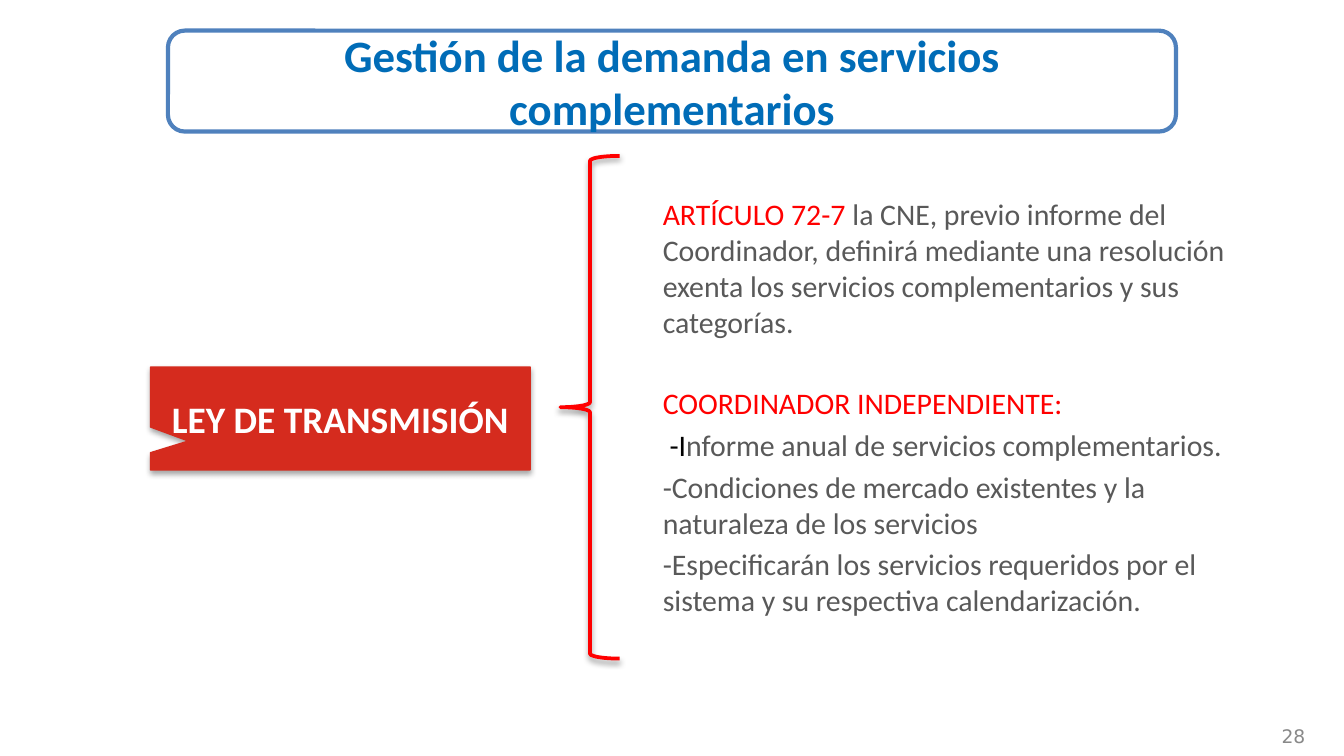
import pptx
import pptx.util
import pptx.dml.color
import pptx.enum.shapes
import pptx.enum.text
import pptx.oxml
import pptx.oxml.ns

WIDE = pptx.util.Inches(10)
HIGH = pptx.util.Emu(WIDE * 9 // 16)
KIND = pptx.enum.shapes.MSO_SHAPE
ALIGN = pptx.enum.text.PP_ALIGN
MID = pptx.enum.text.MSO_ANCHOR.MIDDLE
RED, GRAY, BLACK, WHITE = "FF0000", "595959", "000000", "FFFFFF"


def color(code):
    """Turn a hex string into a colour."""
    return pptx.dml.color.RGBColor.from_string(code)


def area(left, top, width, height):
    """Turn percent shares of the slide into a box."""
    return (round(WIDE * left / 100), round(HIGH * top / 100),
            round(WIDE * width / 100), round(HIGH * height / 100))


def style(run, size, code, bold=False, face="Calibri"):
    """Set the font of a run."""
    run.font.name = face
    run.font.size = pptx.util.Pt(size)
    run.font.bold = bold
    run.font.color.rgb = color(code)


def label(shape, text, align, *look):
    """Write one middle-anchored line of text in a shape."""
    frame = shape.text_frame
    frame.word_wrap = True
    frame.vertical_anchor = MID
    frame.text = text
    para = frame.paragraphs[0]
    para.alignment = align
    style(para.runs[0], *look)


def block(slide, kind, box, fill, line, width):
    """Add a flat shape with the given fill and line."""
    shape = slide.shapes.add_shape(kind, *box)
    shape.shadow.inherit = False
    if fill:
        shape.fill.solid()
        shape.fill.fore_color.rgb = color(fill)
    else:
        shape.fill.background()
    shape.line.color.rgb = color(line)
    shape.line.width = pptx.util.Pt(width)
    return shape


def shade(shape, dist, alpha):
    """Drop a soft shadow straight below a shape."""
    space = pptx.oxml.ns.nsdecls("a")
    blur, drop = pptx.util.Pt(3.1), pptx.util.Pt(dist)
    glow = pptx.oxml.parse_xml(
        f'<a:outerShdw {space} blurRad="{blur}" dist="{drop}" dir="5400000" '
        f'rotWithShape="0"><a:srgbClr val="{BLACK}">'
        f'<a:alpha val="{alpha * 1000}"/></a:srgbClr></a:outerShdw>')
    shape._element.spPr.find(pptx.oxml.ns.qn("a:effectLst")).append(glow)


def title(slide, box):
    """Place the framed title."""
    shape = block(slide, KIND.ROUNDED_RECTANGLE, box, WHITE, "4F81BD", 2.25)
    label(shape, "Gestión de la demanda en servicios complementarios",
          ALIGN.CENTER, 24, "006CB7", True)


def law(slide, box):
    """Place the red callout that names the law."""
    shape = block(slide, KIND.RECTANGULAR_CALLOUT, box, "D52B1E", "D52B1E", 0.75)
    shape.adjustments[0] = -0.4
    shape.adjustments[1] = 0.22
    shade(shape, 1.8, 35)
    label(shape, "LEY DE TRANSMISIÓN", ALIGN.CENTER, 20, WHITE, True)


def brace(slide, box):
    """Place the brace between law and detail."""
    shade(block(slide, KIND.LEFT_BRACE, box, None, RED, 2), 1.6, 38)


def detail(slide, box):
    """Place the paragraphs on the article and the coordinator."""
    rows = [
        (0, [("ARTÍCULO 72-7 ", RED),
             ("la CNE, previo informe del Coordinador, definirá mediante una "
              "resolución exenta los servicios complementarios y sus "
              "categorías.", GRAY)]),
        (24.4, [("COORDINADOR INDEPENDIENTE:", RED)]),
        (3.2, [(" -I", BLACK),
               ("nforme anual de servicios complementarios.", GRAY)]),
        (3.2, [("-Condiciones de mercado existentes y la naturaleza de los "
                "servicios", GRAY)]),
        (3.2, [("-Especificarán los servicios requeridos por el sistema y su "
                "respectiva calendarización.", GRAY)]),
    ]
    frame = slide.shapes.add_textbox(*box).text_frame
    frame.word_wrap = True
    for num, (gap, parts) in enumerate(rows):
        para = frame.add_paragraph() if num else frame.paragraphs[0]
        para.space_before = pptx.util.Pt(gap)
        for text, code in parts:
            run = para.add_run()
            run.text = text
            style(run, 16, code)


def folio(slide, box):
    """Place the slide number."""
    shape = slide.shapes.add_textbox(*box)
    shape.text_frame.margin_top = shape.text_frame.margin_bottom = 0
    label(shape, "28", ALIGN.RIGHT, 10, "898989", False, "DejaVu Sans")


def main():
    """Build and save the slide."""
    deck = pptx.Presentation()
    deck.slide_width, deck.slide_height = WIDE, HIGH
    slide = deck.slides.add_slide(deck.slide_layouts[6])
    detail(slide, area(48.33, 25.07, 46.9, 66))
    title(slide, area(12.5, 4.05, 75, 13.35))
    brace(slide, area(41.7, 20.62, 4.4, 66.5))
    folio(slide, area(74.8, 96, 23.3, 2.85))
    law(slide, area(11.2, 48.55, 28.25, 13.6))
    deck.save("out.pptx")


if __name__ == "__main__":
    main()
